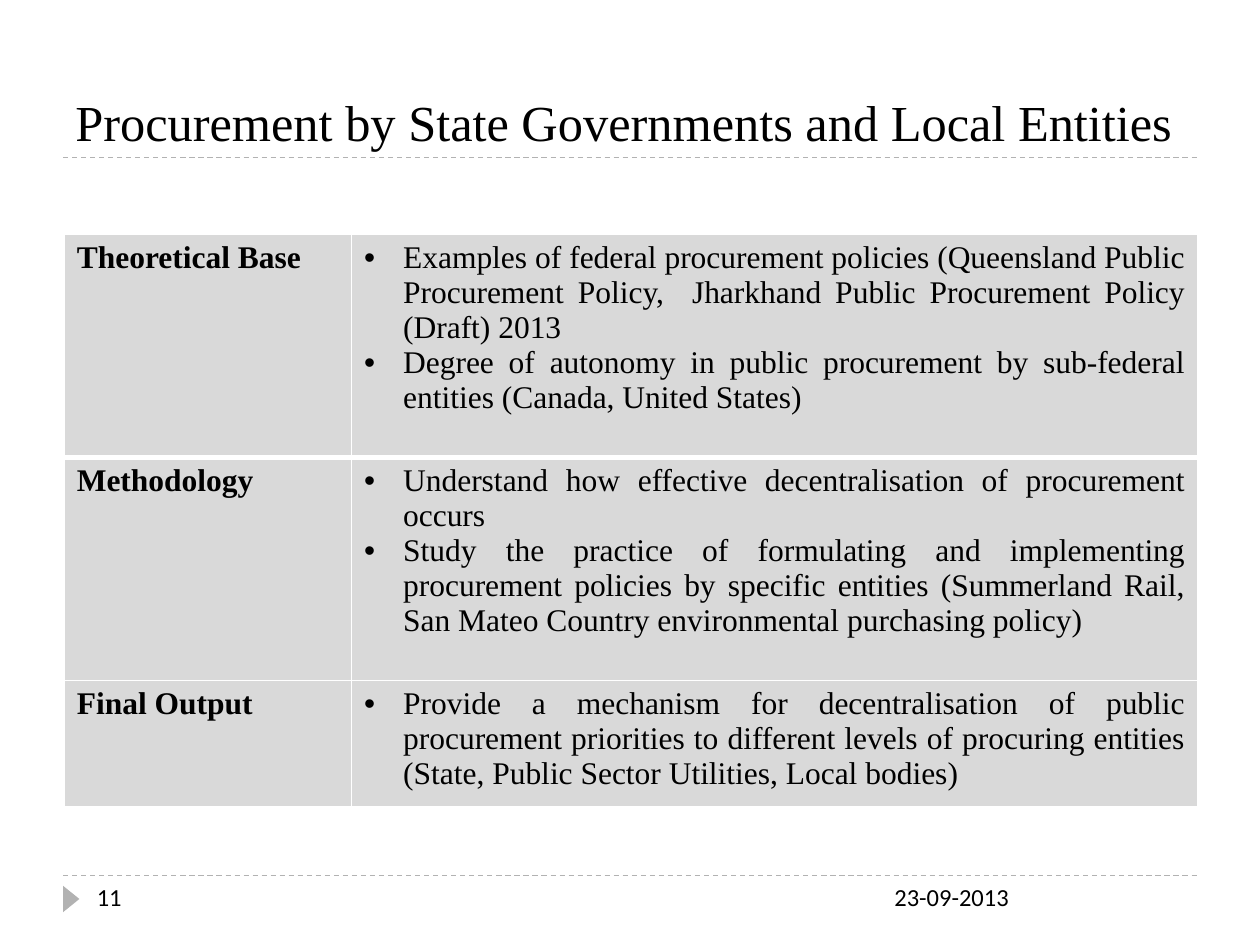
from dataclasses import dataclass

from lxml import etree
from pptx import Presentation
from pptx.dml.color import RGBColor
from pptx.enum import dml, shapes, text
from pptx.oxml.ns import qn
from pptx.util import Inches, Pt


@dataclass(frozen=True)
class Theme:
    ink: str = "000000"
    rule: str = "B2B2B2"
    cell: str = "D9D9D9"
    edge: str = "FFFFFF"
    serif: str = "Times New Roman"
    sans: str = "Calibri"
    title: float = 28.8
    body: float = 18
    foot: float = 14


theme = Theme()


def style(para, font, size, bold=False):
    for run in para.runs:
        run.font.name = font
        run.font.size = Pt(size)
        run.font.bold = bold
        run.font.color.rgb = RGBColor.from_string(theme.ink)


def border(cell, widths):
    props = cell._tc.get_or_add_tcPr()
    for spot, (side, width) in enumerate(widths.items()):
        line = etree.Element(qn(f"a:ln{side}"), w=str(Pt(width)))
        fill = etree.SubElement(line, qn("a:solidFill"))
        etree.SubElement(fill, qn("a:srgbClr"), val=theme.edge)
        props.insert(spot, line)


prs = Presentation()
prs.slide_width, prs.slide_height = Inches(10), Inches(7.5)
slide = prs.slides.add_slide(prs.slide_layouts[6])

# Dashed rules
for y in (6.95, 1.25):
    rule = slide.shapes.add_connector(
        shapes.MSO_CONNECTOR.STRAIGHT, Inches(0.5), Inches(y), Inches(9.5), Inches(y))
    rule.line.color.rgb = RGBColor.from_string(theme.rule)
    rule.line.width = Pt(0.75)
    rule.line.dash_style = dml.MSO_LINE.DASH
    etree.SubElement(rule._element.spPr, qn("a:effectLst"))

# Page marker
mark = slide.shapes.add_shape(
    shapes.MSO_SHAPE.ISOSCELES_TRIANGLE,
    Inches(0.46), Inches(7.07), Inches(0.21), Inches(0.13))
mark.rotation = 90
mark.shadow.inherit = False
mark.fill.solid()
mark.fill.fore_color.rgb = RGBColor.from_string(theme.rule)
mark.line.fill.background()

# Title, date and page number
top, base = text.MSO_ANCHOR.TOP, text.MSO_ANCHOR.BOTTOM
labels = [
    ("Procurement by State Governments and Local Entities",
     (0.5, 0.17, 9, 1.08), theme.serif, theme.title, base),
    ("23-09-2013", (7, 6.95, 2.5, 0.4), theme.sans, theme.foot, top),
    ("11", (0.67, 6.95, 2.17, 0.4), theme.sans, theme.foot, top),
]
for words, place, font, size, anchor in labels:
    frame = slide.shapes.add_textbox(*map(Inches, place)).text_frame
    frame.word_wrap = True
    frame.vertical_anchor = anchor
    frame.text = words
    style(frame.paragraphs[0], font, size)

# Table
rows = [
    ("Theoretical Base", 1.77, [
        "Examples of federal procurement policies (Queensland Public Procurement "
        "Policy,  Jharkhand Public Procurement Policy (Draft) 2013",
        "Degree of autonomy in public procurement by sub-federal entities "
        "(Canada, United States)"]),
    ("Methodology", 1.77, [
        "Understand how effective decentralisation of procurement occurs",
        "Study the practice of formulating and implementing procurement policies "
        "by specific entities (Summerland Rail, San Mateo Country environmental "
        "purchasing policy)"]),
    ("Final Output", 0.92, [
        "Provide a mechanism for decentralisation of public procurement priorities "
        "to different levels of procuring entities (State, Public Sector Utilities, "
        "Local bodies)"]),
]
high = sum(row[1] for row in rows)
table = slide.shapes.add_table(
    len(rows), 2, Inches(0.51), Inches(1.86), Inches(9), Inches(high)).table
table.horz_banding = False
for col, width in zip(table.columns, (2.28, 6.72)):
    col.width = Inches(width)

for r, (head, height, points) in enumerate(rows):
    table.rows[r].height = Inches(height)
    for c, lines in enumerate(([head], points)):
        cell = table.cell(r, c)
        cell.fill.solid()
        cell.fill.fore_color.rgb = RGBColor.from_string(theme.cell)
        border(cell, {"L": 1, "R": 1, "T": 3 if r == 1 else 1, "B": 3 if r == 0 else 1})
        cell.text_frame.text = "\n".join(lines)
        for para in cell.text_frame.paragraphs:
            para.alignment = text.PP_ALIGN.JUSTIFY
            style(para, theme.serif, theme.body, bold=c == 0)
            if c == 1:
                props = para._p.get_or_add_pPr()
                props.set("marL", str(Inches(0.31)))
                props.set("indent", str(-Inches(0.31)))
                etree.SubElement(props, qn("a:buFont"), typeface="Arial")
                etree.SubElement(props, qn("a:buChar"), char="•")

prs.save("out.pptx")
